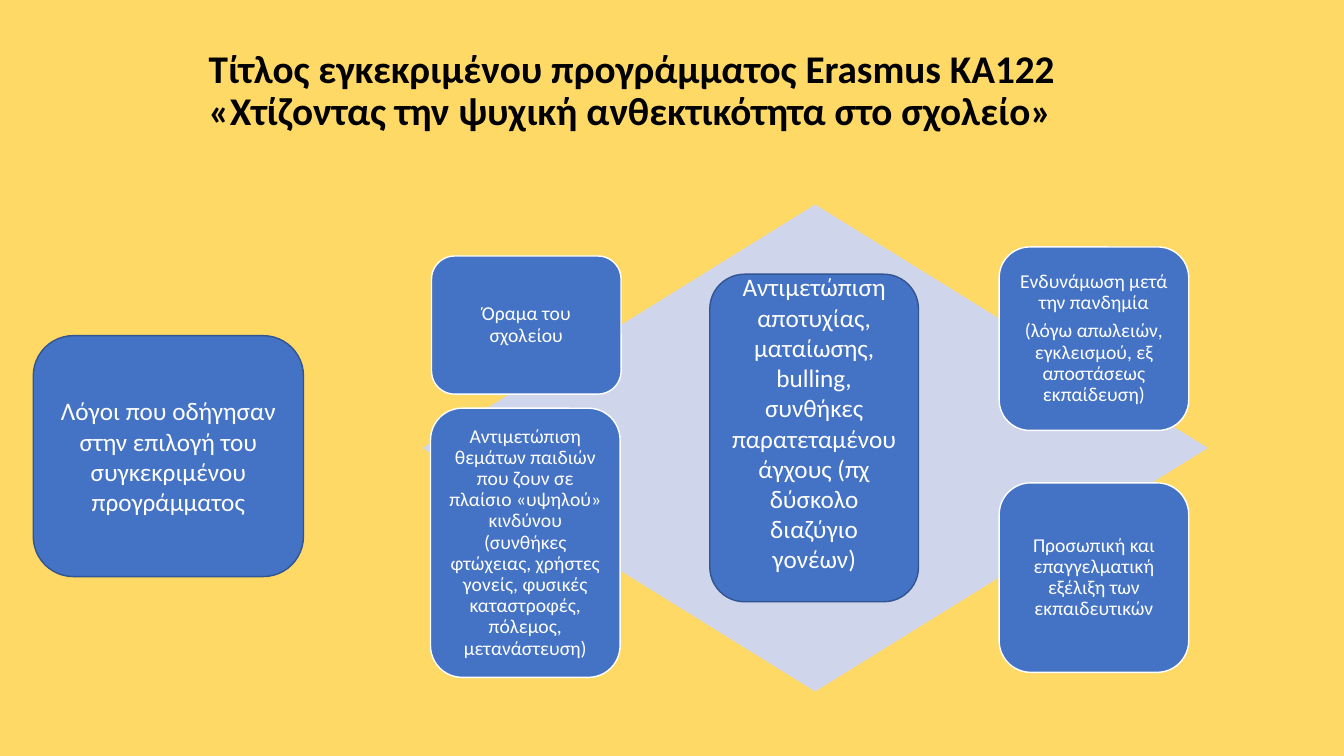
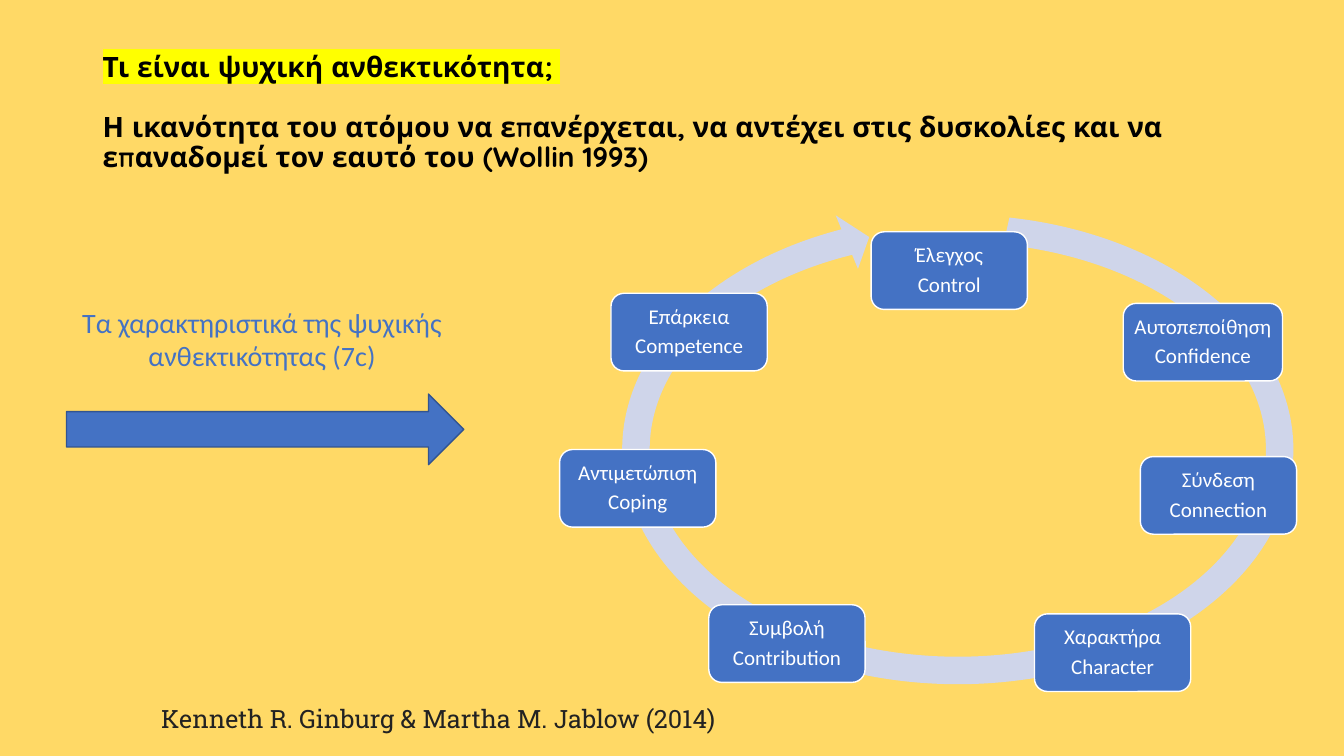
from dataclasses import dataclass

from lxml import etree
from pptx import Presentation
from pptx import util as u
from pptx.dml.color import RGBColor
from pptx.enum import shapes, text
from pptx.oxml import ns

COLORS = {
    "background": "FFD966",
    "blue": "4472C4",
    "dark_blue": "325491",
    "pale": "CFD5EA",
    "white": "FFFFFF",
    "black": "000000",
    "gray": "222222",
    "marker": "FFFF00",
}
BODY_FONT = "Calibri"
SHAPE = shapes.MSO_SHAPE
ALIGN = text.PP_ALIGN
ANCHOR = text.MSO_ANCHOR


@dataclass(frozen=True)
class Area:
    left: float
    top: float
    width: float
    height: float

    def lengths(self):
        return [u.Inches(v) for v in (self.left, self.top, self.width, self.height)]


@dataclass(frozen=True)
class Style:
    size: float
    color: str
    font: str = BODY_FONT
    bold: bool = False
    align: ALIGN = ALIGN.CENTER
    spacing: float = 1.0
    gap: float = 0


@dataclass(frozen=True)
class Card:
    area: Area
    lines: tuple[str, ...]


TITLE_AREA = Area(0.92, 0.4, 11.5, 1.45)
REASON = Style(14, "white", spacing=0.9, gap=5)
TRAIT = Style(15, "white", spacing=0.9, gap=5)
KEY = Style(18, "white")

REASONS = (
    Card(Area(4.28, 2.54, 1.88, 1.37), ("Όραμα του σχολείου",)),
    Card(Area(9.91, 2.45, 1.88, 1.82), (
        "Ενδυνάμωση μετά την πανδημία",
        "(λόγω απωλειών, εγκλεισμού, εξ αποστάσεως εκπαίδευση)",
    )),
    Card(Area(4.27, 4.05, 1.88, 2.67), (
        "Αντιμετώπιση θεμάτων παιδιών που ζουν σε πλαίσιο «υψηλού» κινδύνου "
        "(συνθήκες φτώχειας, χρήστες γονείς, φυσικές καταστροφές, πόλεμος, "
        "μετανάστευση)",
    )),
    Card(Area(9.91, 4.79, 1.88, 1.88), (
        "Προσωπική και επαγγελματική εξέλιξη των εκπαιδευτικών",
    )),
)
QUESTION = Card(Area(0.33, 3.33, 2.68, 2.39), (
    "Λόγοι που οδήγησαν στην επιλογή του συγκεκριμένου προγράμματος",
))
CENTER = Card(Area(7.04, 2.72, 2.07, 3.25), (
    "Αντιμετώπιση αποτυχίας,",
    "ματαίωσης,",
    "bulling,",
    "συνθήκες παρατεταμένου άγχους (πχ δύσκολο διαζύγιο γονέων)",
))
TRAITS = tuple(
    Card(Area(left, top, width, 0.77), (greek, english))
    for left, top, width, greek, english in (
        (6.06, 2.91, 1.55, "Επάρκεια", "Competence"),
        (11.14, 3.01, 1.58, "Αυτοπεποίθηση", "Confidence"),
        (11.31, 4.53, 1.55, "Σύνδεση", "Connection"),
        (10.26, 6.09, 1.55, "Χαρακτήρα", "Character"),
        (7.03, 6, 1.55, "Συμβολή", "Contribution"),
        (5.55, 4.46, 1.55, "Αντιμετώπιση", "Coping"),
        (8.64, 2.3, 1.55, "Έλεγχος", "Control"),
    )
)
CYCLE_ADJUSTMENTS = (0.055, 3.307, 145.115, 169.527, 0.058)


def rgb(name: str) -> RGBColor:
    return RGBColor.from_string(COLORS[name])


def add_page(deck):
    page = deck.slides.add_slide(deck.slide_layouts[6])
    page.background.fill.solid()
    page.background.fill.fore_color.rgb = rgb("background")
    return page


def add_figure(page, kind: SHAPE, area: Area, fill: str, line: str | None = None):
    figure = page.shapes.add_shape(kind, *area.lengths())
    figure.shadow.inherit = False
    figure.fill.solid()
    figure.fill.fore_color.rgb = rgb(fill)
    if line:
        figure.line.color.rgb = rgb(line)
        figure.line.width = u.Pt(1)
    else:
        figure.line.fill.background()
    return figure


def write(box, lines: tuple[str, ...], style: Style, anchor: ANCHOR = ANCHOR.MIDDLE):
    frame = box.text_frame
    frame.word_wrap = True
    frame.vertical_anchor = anchor
    for index, line in enumerate(lines):
        para = frame.add_paragraph() if index else frame.paragraphs[0]
        para.alignment = style.align
        para.line_spacing = style.spacing
        if index and style.gap:
            para.space_before = u.Pt(style.gap)
        span = para.add_run()
        span.text = line
        span.font.size = u.Pt(style.size)
        span.font.name = style.font
        span.font.bold = style.bold
        span.font.color.rgb = rgb(style.color)
    return frame


def add_text(page, area: Area, lines: tuple[str, ...], style: Style,
             anchor: ANCHOR = ANCHOR.TOP):
    return write(page.shapes.add_textbox(*area.lengths()), lines, style, anchor)


def add_title(page, lines: tuple[str, ...], size: float, font: str, gap: float = 0):
    style = Style(size, "black", font, True, ALIGN.LEFT, 0.9, gap)
    return add_text(page, TITLE_AREA, lines, style, ANCHOR.MIDDLE)


def add_card(page, card: Card, style: Style, line: str = "white",
             inset: float | None = 0.06):
    box = add_figure(page, SHAPE.ROUNDED_RECTANGLE, card.area, "blue", line)
    frame = write(box, card.lines, style)
    if inset is not None:
        frame.margin_left = frame.margin_right = u.Inches(inset)
        frame.margin_top = frame.margin_bottom = u.Inches(inset)
    return frame


def highlight(span, color: str) -> None:
    marker = etree.Element(ns.qn("a:highlight"))
    etree.SubElement(marker, ns.qn("a:srgbClr")).set("val", COLORS[color])
    span.font._element.find(ns.qn("a:solidFill")).addnext(marker)


def build_reasons(deck) -> None:
    page = add_page(deck)
    title = add_title(page, (
        "Τίτλος εγκεκριμένου προγράμματος Erasmus KA122",
        "«Χτίζοντας την ψυχική ανθεκτικότητα στο σχολείο»",
    ), 28, BODY_FONT)
    title.margin_left = u.Inches(1.15)
    title.margin_bottom = u.Inches(0.48)
    add_figure(page, SHAPE.DIAMOND, Area(4.19, 2.03, 7.79, 4.83), "pale")
    for card in REASONS:
        add_card(page, card, REASON)
    add_card(page, QUESTION, KEY, "dark_blue", None)
    center = add_card(page, CENTER, KEY, "dark_blue", None)
    center.margin_bottom = u.Inches(0.35)


def build_traits(deck) -> None:
    page = add_page(deck)
    title = add_title(page, (
        "Τι είναι ψυχική ανθεκτικότητα; ",
        "Η ικανότητα του ατόμου να επανέρχεται, να αντέχει στις δυσκολίες "
        "και να επαναδομεί τον εαυτό του (Wollin 1993)",
    ), 20, "Quicksand", 21.5)
    highlight(title.paragraphs[0].runs[0], "marker")
    cycle = add_figure(page, SHAPE.CIRCULAR_ARROW, Area(6.02, 1.98, 6.96, 4.96), "pale")
    for index, value in enumerate(CYCLE_ADJUSTMENTS):
        cycle.adjustments[index] = value
    for card in TRAITS:
        add_card(page, card, TRAIT)
    add_figure(page, SHAPE.RIGHT_ARROW, Area(0.66, 3.91, 3.94, 0.7), "blue", "dark_blue")
    caption = add_text(page, Area(0.7, 2.98, 3.8, 0.77), (
        "Τα χαρακτηριστικά της ψυχικής",
        "ανθεκτικότητας (7c)",
    ), Style(20, "blue"))
    caption.word_wrap = False
    add_text(page, Area(1.5, 6.93, 7.85, 0.4),
             ("Kenneth R. Ginburg & Martha M. Jablow (2014)",),
             Style(18, "gray", "Roboto Slab", align=ALIGN.LEFT))


def main() -> None:
    deck = Presentation()
    deck.slide_width = u.Inches(13.33)
    deck.slide_height = u.Inches(7.5)
    build_reasons(deck)
    build_traits(deck)
    deck.save("out.pptx")


if __name__ == "__main__":
    main()
